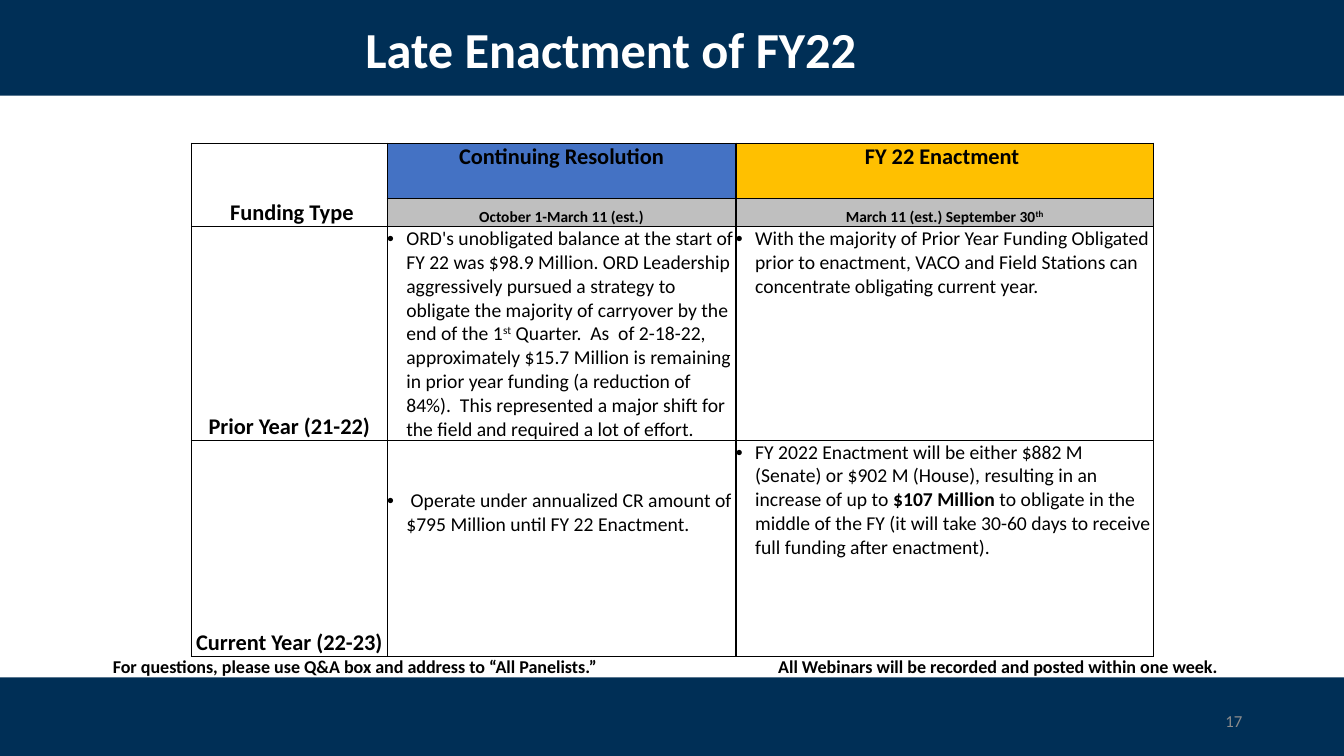
from dataclasses import dataclass
from typing import Optional

from lxml import etree
from pptx import Presentation
from pptx import util as u
from pptx.dml.color import RGBColor
from pptx.enum import shapes, text
from pptx.oxml import ns

FONT = "Calibri"
COLORS = {
    "navy": "002F56",
    "white": "FFFFFF",
    "black": "000000",
    "gray": "8C8C8C",
    "blue": "4472C4",
    "gold": "FFC000",
    "silver": "BFBFBF",
}
COLUMN_WIDTHS = (1.94, 3.46, 4.14)
ROW_HEIGHTS = (0.55, 0.28, 2.12, 2.14)
BORDER_POINTS = {"lnL": 1, "lnR": 1, "lnT": 0.5, "lnB": 0.5}
TOP, MIDDLE, BOTTOM = (
    text.MSO_ANCHOR.TOP,
    text.MSO_ANCHOR.MIDDLE,
    text.MSO_ANCHOR.BOTTOM,
)


@dataclass(frozen=True)
class Bar:
    top: float
    height: float


@dataclass(frozen=True)
class Piece:
    words: str
    bold: Optional[bool] = None
    raised: bool = False


@dataclass(frozen=True)
class FundingCell:
    row: int
    column: int
    pieces: tuple[Piece, ...]
    size: float = 14
    bold: bool = False
    anchor: text.MSO_ANCHOR = TOP
    fill: Optional[str] = None
    bulleted: bool = False
    bottom_margin: float = 0


BARS = (Bar(0, 0.95), Bar(6.72, 0.78))

CELLS = (
    FundingCell(0, 0, (Piece(" ", False), Piece("Funding Type")), 16, True, BOTTOM),
    FundingCell(0, 1, (Piece("Continuing Resolution"),), 16, True, fill="blue"),
    FundingCell(0, 2, (Piece("FY 22 Enactment "),), 16, True, fill="gold"),
    FundingCell(1, 1, (Piece("October 1-March 11 (est.)"),), 11, True, BOTTOM, "silver"),
    FundingCell(
        1, 2, (Piece("March 11 (est.) September 30"), Piece("th", raised=True)),
        11, True, BOTTOM, "silver",
    ),
    FundingCell(2, 0, (Piece("Prior Year (21-22)"),), 16, True, BOTTOM),
    FundingCell(
        2, 1,
        (
            Piece(
                "ORD's unobligated balance at the start of FY 22 was $98.9 Million. "
                "ORD Leadership aggressively pursued a strategy to obligate the "
                "majority of carryover by the end of the 1"
            ),
            Piece("st", raised=True),
            Piece(
                " Quarter.  As  of 2-18-22, approximately $15.7 Million is remaining "
                "in prior year funding (a reduction of 84%).  This represented a major "
                "shift for the field and required a lot of effort."
            ),
        ),
        anchor=MIDDLE, bulleted=True,
    ),
    FundingCell(
        2, 2,
        (
            Piece(
                "With the majority of Prior Year Funding Obligated prior to enactment, "
                "VACO and Field Stations can concentrate obligating current year."
            ),
        ),
        bulleted=True,
    ),
    FundingCell(3, 0, (Piece("Current Year (22-23)"),), 16, True, BOTTOM),
    FundingCell(
        3, 1,
        (
            Piece(
                " Operate under annualized CR amount of $795 Million until "
                "FY 22 Enactment."
            ),
        ),
        anchor=MIDDLE, bulleted=True, bottom_margin=0.71,
    ),
    FundingCell(
        3, 2,
        (
            Piece(
                "FY 2022 Enactment will be either $882 M (Senate) or $902 M (House), "
                "resulting in an increase of up to"
            ),
            Piece(" $107 Million", True),
            Piece(
                " to obligate in the middle of the FY (it will take 30-60 days to "
                "receive full funding after enactment)."
            ),
        ),
        bulleted=True,
    ),
)


def rgb(name: str) -> RGBColor:
    return RGBColor.from_string(COLORS[name])


def add_text(paragraph, words: str, *, size: float, bold: bool = False,
             color: str = "black", raised: bool = False) -> None:
    run = paragraph.add_run()
    run.text = words
    run.font.name = FONT
    run.font.size = u.Pt(size)
    run.font.bold = bold
    run.font.color.rgb = rgb(color)
    if raised:
        run._r.get_or_add_rPr().set("baseline", "30000")


def add_bar(slide, bar: Bar, width: int) -> None:
    shape = slide.shapes.add_shape(
        shapes.MSO_SHAPE.RECTANGLE, 0, u.Inches(bar.top), width, u.Inches(bar.height)
    )
    shape.shadow.inherit = False
    shape.fill.solid()
    shape.fill.fore_color.rgb = rgb("navy")
    shape.line.fill.background()


def add_title(slide) -> None:
    title = slide.shapes.title
    title.left, title.top = u.Inches(0.31), u.Inches(0.18)
    title.width, title.height = u.Inches(11.5), u.Inches(0.68)
    title.text_frame.auto_size = text.MSO_AUTO_SIZE.NONE
    title.text_frame.vertical_anchor = MIDDLE
    paragraph = title.text_frame.paragraphs[0]
    paragraph.alignment = text.PP_ALIGN.CENTER
    paragraph.line_spacing = 0.9
    add_text(paragraph, "Late Enactment of FY22", size=36, bold=True, color="white")
    slide.shapes.element.append(title.element)


def add_text_box(slide, left: float, top: float, width: float, height: float):
    box = slide.shapes.add_textbox(*map(u.Inches, (left, top, width, height)))
    box.text_frame.word_wrap = True
    return box.text_frame


def set_borders(cell, row: int) -> None:
    properties = cell._tc.get_or_add_tcPr()
    for index, (side, points) in enumerate(BORDER_POINTS.items()):
        line = etree.Element(ns.qn(f"a:{side}"))
        width = 1 if side == "lnT" and row == 0 else points
        line.set("w", str(u.Pt(width)))
        fill = etree.SubElement(line, ns.qn("a:solidFill"))
        etree.SubElement(fill, ns.qn("a:srgbClr")).set("val", COLORS["black"])
        properties.insert(index, line)


def set_bullet(paragraph) -> None:
    properties = paragraph._p.get_or_add_pPr()
    properties.set("marL", str(u.Inches(0.19)))
    properties.set("indent", str(u.Inches(-0.19)))
    etree.SubElement(properties, ns.qn("a:buFont")).set("typeface", "Arial")
    etree.SubElement(properties, ns.qn("a:buChar")).set("char", "•")


def fill_cell(cell, content: FundingCell) -> None:
    cell.vertical_anchor = content.anchor
    cell.margin_left = cell.margin_right = cell.margin_top = 0
    cell.margin_bottom = u.Inches(content.bottom_margin)
    if content.fill:
        cell.fill.solid()
        cell.fill.fore_color.rgb = rgb(content.fill)
    paragraph = cell.text_frame.paragraphs[0]
    if content.bulleted:
        set_bullet(paragraph)
    else:
        paragraph.alignment = text.PP_ALIGN.CENTER
    for piece in content.pieces:
        bold = content.bold if piece.bold is None else piece.bold
        add_text(paragraph, piece.words, size=content.size, bold=bold, raised=piece.raised)


def add_funding_table(slide) -> None:
    table = slide.shapes.add_table(
        len(ROW_HEIGHTS), len(COLUMN_WIDTHS), u.Inches(1.9), u.Inches(1.42),
        u.Inches(sum(COLUMN_WIDTHS)), u.Inches(sum(ROW_HEIGHTS)),
    ).table
    table.first_row = table.horz_banding = False
    for column, width in zip(table.columns, COLUMN_WIDTHS):
        column.width = u.Inches(width)
    for index, (row, height) in enumerate(zip(table.rows, ROW_HEIGHTS)):
        row.height = u.Inches(height)
        for cell in row.cells:
            cell.fill.background()
            set_borders(cell, index)
    table.cell(0, 0).merge(table.cell(1, 0))
    for content in CELLS:
        fill_cell(table.cell(content.row, content.column), content)


def add_footer(slide) -> None:
    paragraph = add_text_box(slide, 1.02, 6.51, 11.29, 0.26).paragraphs[0]
    paragraph.line_spacing = 0.7
    tabs = etree.SubElement(paragraph._p.get_or_add_pPr(), ns.qn("a:tabLst"))
    tab = etree.SubElement(tabs, ns.qn("a:tab"))
    tab.set("pos", str(u.Inches(6.6)))
    tab.set("algn", "l")
    add_text(
        paragraph,
        "For questions, please use Q&A box and address to “All Panelists.”\t"
        "All Webinars will be recorded and posted within one week.",
        size=12.9, bold=True,
    )


def add_page_number(slide) -> None:
    frame = add_text_box(slide, 9.42, 6.95, 3, 0.4)
    frame.vertical_anchor = MIDDLE
    frame.paragraphs[0].alignment = text.PP_ALIGN.RIGHT
    add_text(frame.paragraphs[0], "17", size=12, color="gray")


def main() -> None:
    presentation = Presentation()
    presentation.slide_width = u.Inches(13.33)
    presentation.slide_height = u.Inches(7.5)
    slide = presentation.slides.add_slide(presentation.slide_layouts[5])
    for bar in BARS:
        add_bar(slide, bar, presentation.slide_width)
    add_title(slide)
    add_page_number(slide)
    add_funding_table(slide)
    add_footer(slide)
    presentation.save("out.pptx")


if __name__ == "__main__":
    main()
